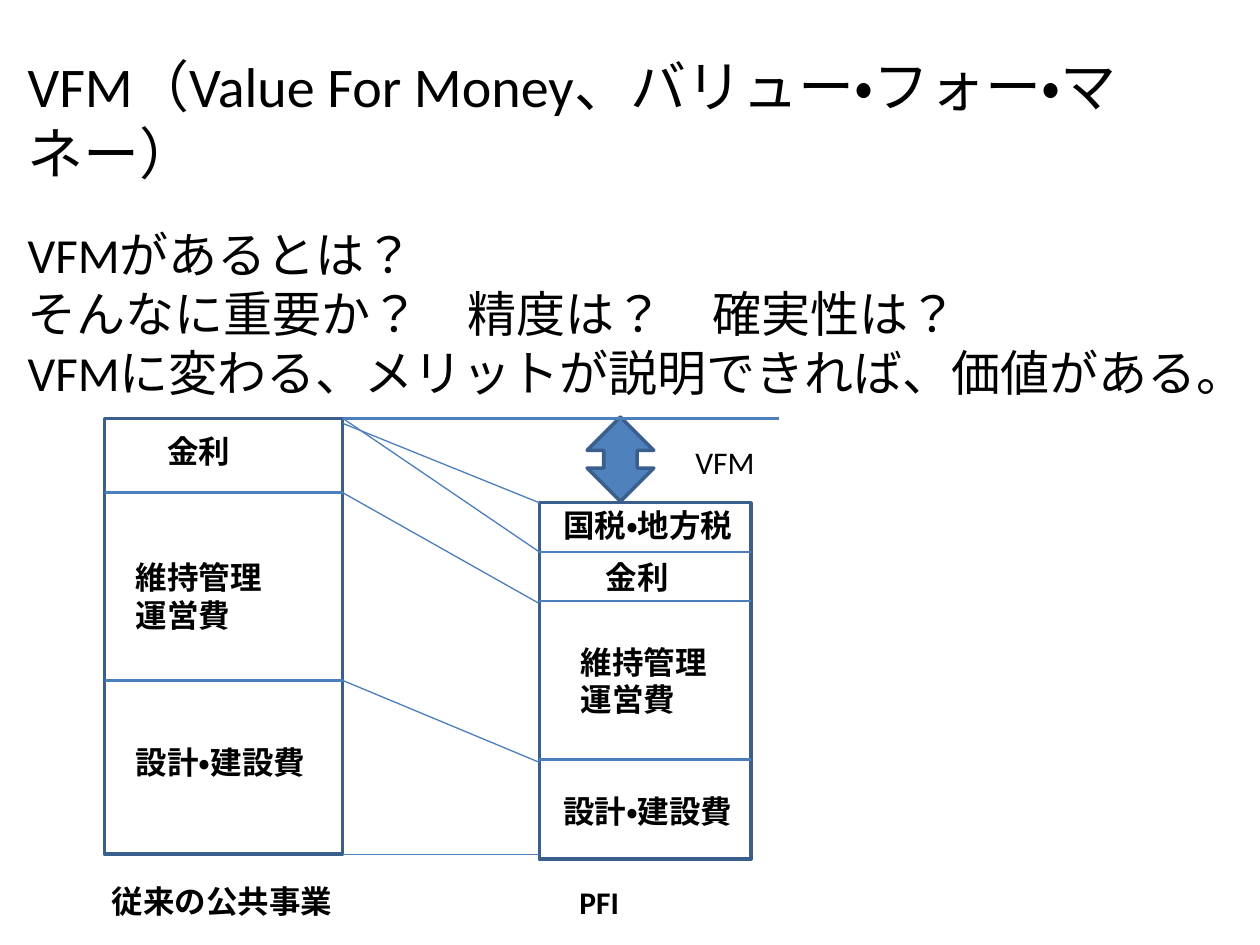
"""Build a slide comparing the cost of conventional public works with PFI."""
from lxml import etree
from pptx import Presentation
from pptx.dml.color import RGBColor
from pptx.enum.lang import MSO_LANGUAGE_ID
from pptx.enum.shapes import MSO_CONNECTOR, MSO_SHAPE
from pptx.enum.text import MSO_AUTO_SIZE
from pptx.oxml.ns import qn
from pptx.util import Inches, Pt

RECTANGLE = MSO_SHAPE.RECTANGLE
UP_DOWN_ARROW = MSO_SHAPE.UP_DOWN_ARROW
STRAIGHT = MSO_CONNECTOR.STRAIGHT
FIT_TEXT = MSO_AUTO_SIZE.SHAPE_TO_FIT_TEXT
JAPANESE = MSO_LANGUAGE_ID.JAPANESE
OUTLINE, RULE, ARROW_FILL, BLACK = "3A5F8C", "4B7EBC", "4F81BD", "000000"


def color(value):
    return RGBColor.from_string(value)


def add_text(text, left, top, width, height, sizes=(18,), bold=False, wrap=False, gaps=()):
    box = slide.shapes.add_textbox(Inches(left), Inches(top), Inches(width), Inches(height))
    frame = box.text_frame
    frame.word_wrap = wrap
    frame.auto_size = FIT_TEXT
    for index, line in enumerate(text.split("\n")):
        para = frame.paragraphs[0] if index == 0 else frame.add_paragraph()
        if index in gaps:
            para.space_before = Pt(22)
        span = para.add_run()
        span.text = line
        span.font.language_id = JAPANESE
        span.font.name = "Calibri"
        span.font.size = Pt(sizes[min(index, len(sizes) - 1)])
        span.font.bold = bold
        span.font.color.rgb = color(BLACK)


deck = Presentation()
deck.slide_width, deck.slide_height = Inches(10), Inches(7.5)
slide = deck.slides.add_slide(deck.slide_layouts[6])

add_text(
    "VFM（Value For Money、バリュー・フォー・マネー）\n"
    "VFMがあるとは？\n"
    "そんなに重要か？　精度は？　確実性は？\n"
    "VFMに変わる、メリットが説明できれば、価値がある。",
    0.12, 0.36, 9.88, 2.66, sizes=(32, 28), wrap=True, gaps=(1,),
)

public_left, public_right, public_top, public_bottom = 0.83, 2.72, 3.32, 6.78
pfi_left, pfi_right, pfi_top, pfi_bottom = 4.28, 5.96, 3.99, 6.82

for kind, left, top, right, bottom, fill in [
    (RECTANGLE, public_left, public_top, public_right, public_bottom, None),
    (RECTANGLE, pfi_left, pfi_top, pfi_right, pfi_bottom, None),
    (UP_DOWN_ARROW, 4.66, 3.31, 5.19, 3.98, ARROW_FILL),
]:
    shape = slide.shapes.add_shape(
        kind, Inches(left), Inches(top), Inches(right - left), Inches(bottom - top))
    shape.shadow.inherit = False
    shape.line.color.rgb = color(OUTLINE)
    shape.line.width = Pt(2)
    if fill:
        shape.fill.solid()
        shape.fill.fore_color.rgb = color(fill)
    else:
        shape.fill.background()

dividers = [(public_left, y, public_right, y, 1.5) for y in (3.91, 5.4)]
dividers += [(pfi_left, y, pfi_right, y, 1.5) for y in (4.38, 4.77, 6.03)]
links = [
    (public_right, start, pfi_left, end, 0.75)
    for start, end in [(3.36, pfi_top), (3.91, 4.79), (5.4, 6.05),
                       (public_bottom, public_bottom), (public_top, 4.38)]
]
top_level = [(public_right, public_top, 6.18, public_top, 1.5)]

for x1, y1, x2, y2, width in dividers + links + top_level:
    line = slide.shapes.add_connector(STRAIGHT, Inches(x1), Inches(y1), Inches(x2), Inches(y2))
    line.line.color.rgb = color(RULE)
    line.line.width = Pt(width)
    etree.SubElement(line._element.spPr, qn("a:effectLst"))

for text, left, top, width, height in [
    ("金利", 1.23, 3.38, 0.71, 0.4),
    ("維持管理\n運営費", 0.98, 4.38, 1.21, 0.71),
    ("設計・建設費", 0.98, 5.85, 1.72, 0.4),
    ("国税・地方税", 4.37, 3.97, 1.72, 0.4),
    ("金利", 4.71, 4.38, 0.71, 0.4),
    ("維持管理\n運営費", 4.51, 5.05, 1.21, 0.71),
    ("設計・建設費", 4.37, 6.24, 1.72, 0.4),
    ("従来の公共事業", 0.79, 6.95, 1.97, 0.4),
    ("PFI", 4.5, 6.96, 0.52, 0.4),
]:
    add_text(text, left, top, width, height, bold=True)
add_text("VFM", 5.42, 3.47, 0.68, 0.4)

deck.save("out.pptx")
